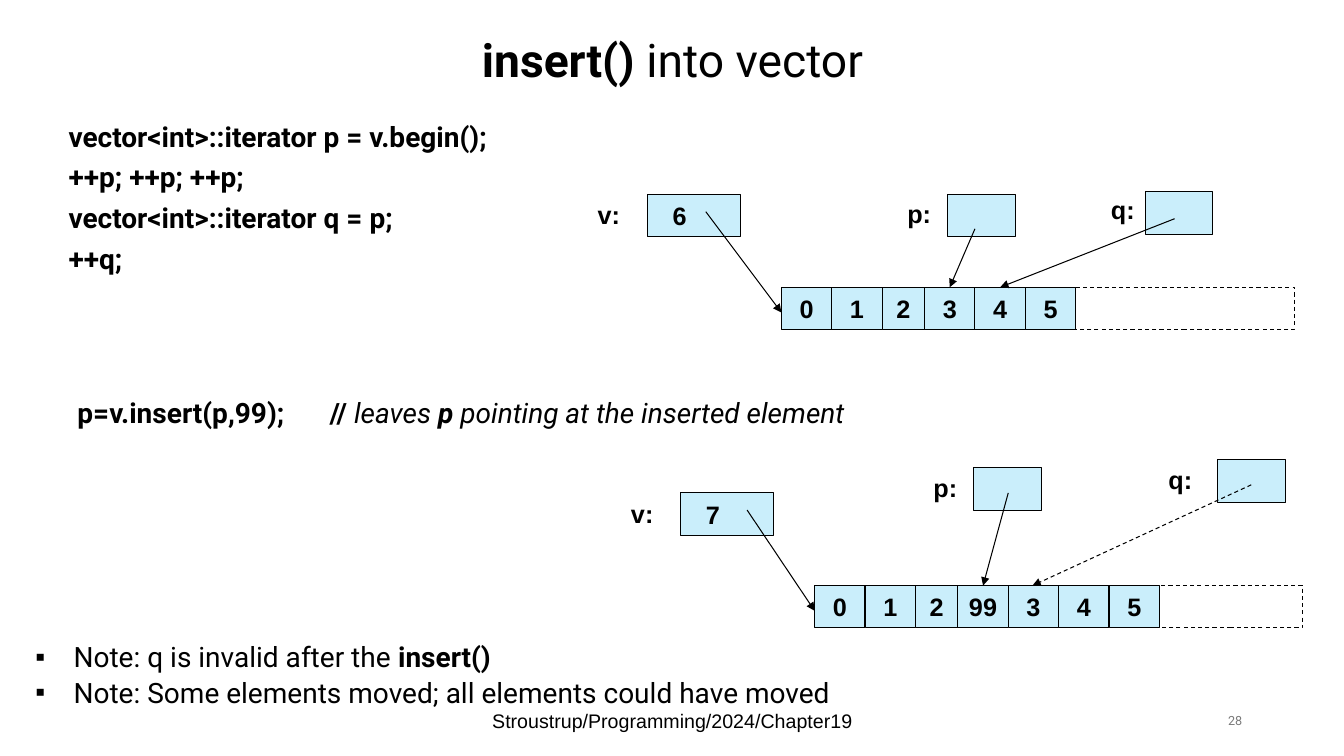
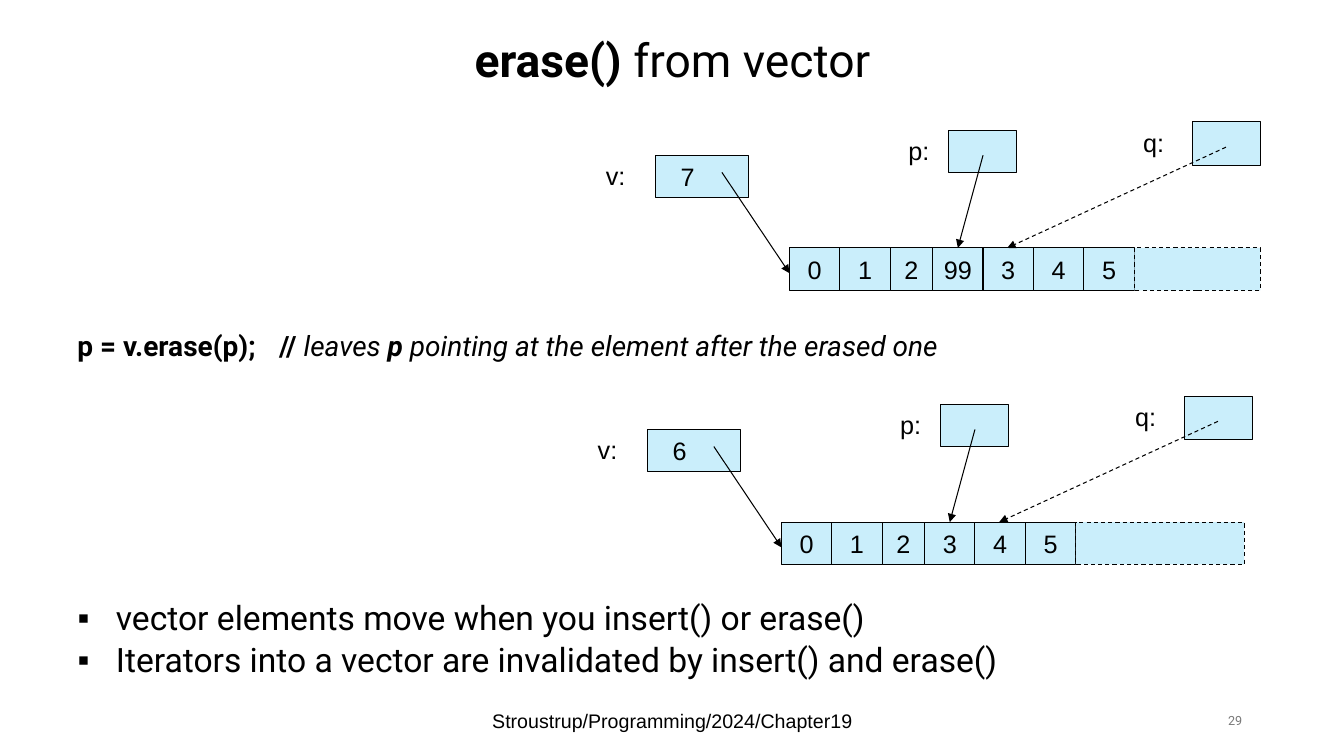
import lxml.etree
import pptx
import pptx.dml.color
import pptx.enum.dml
import pptx.enum.shapes
import pptx.enum.text
import pptx.oxml.ns
import pptx.util

Inches = pptx.util.Inches
Pt = pptx.util.Pt
qn = pptx.oxml.ns.qn
Align = pptx.enum.text.PP_ALIGN
Anchor = pptx.enum.text.MSO_ANCHOR
Dash = pptx.enum.dml.MSO_LINE


class Theme:
    ink = pptx.dml.color.RGBColor.from_string("000000")
    muted = pptx.dml.color.RGBColor.from_string("797979")
    cell = pptx.dml.color.RGBColor.from_string("CAEEFB")
    text_font = "Roboto"
    diagram_font = "Arial"
    title_size = 33
    list_size = 24
    code_size = 20
    diagram_size = 18
    footer_size = 14
    number_size = 9
    line_width = Pt(0.75)


def write(frame, paragraphs, *, size, font=Theme.text_font, color=Theme.ink,
          align=Align.LEFT, anchor=Anchor.TOP, spacing=1.0, before=0,
          bullet=None, tab=None, wrap=True):
    """Fill a frame; each paragraph is a list of (text, style), style using b and i."""
    frame.word_wrap = wrap
    frame.auto_size = pptx.enum.text.MSO_AUTO_SIZE.NONE
    frame.vertical_anchor = anchor
    for index, pieces in enumerate(paragraphs):
        para = frame.add_paragraph() if index else frame.paragraphs[0]
        properties = para._p.get_or_add_pPr()
        indent = Inches(0.38) if bullet else 0
        properties.set("marL", str(indent))
        properties.set("indent", str(-indent))
        if bullet:
            lxml.etree.SubElement(properties, qn("a:buFont"), typeface="Arial")
            lxml.etree.SubElement(properties, qn("a:buChar"), char=bullet)
        else:
            lxml.etree.SubElement(properties, qn("a:buNone"))
        if tab:
            stops = lxml.etree.SubElement(properties, qn("a:tabLst"))
            lxml.etree.SubElement(stops, qn("a:tab"), pos=str(Inches(tab)), algn="l")
        para.alignment = align
        para.line_spacing = spacing
        para.space_before = Pt(before if index else 0)
        for text, style in pieces:
            span = para.add_run()
            span.text = text
            span.font.name = font
            span.font.size = Pt(size)
            span.font.color.rgb = color
            span.font.bold = "b" in style
            span.font.italic = "i" in style


def draw_box(page, left, top, width, height=0.42, filled=True, dashed=False):
    box = page.shapes.add_shape(pptx.enum.shapes.MSO_SHAPE.RECTANGLE,
                                Inches(left), Inches(top), Inches(width), Inches(height))
    box.shadow.inherit = False
    if filled:
        box.fill.solid()
        box.fill.fore_color.rgb = Theme.cell
    else:
        box.fill.background()
    box.line.color.rgb = Theme.ink
    box.line.width = Theme.line_width
    if dashed:
        box.line.dash_style = Dash.DASH
    return box


# Offsets from the top left corner of the row of elements:
# label, box (left, top, width, height) and arrow start and end.
vector_handle = dict(label=("v:", -1.92, -0.92), box=(-1.33, -0.92, 0.92, 0.42),
                     arrow=(-0.67, -0.75, 0, 0.25))
p_handle = dict(label=("p:", 1.08, -1.17), box=(1.58, -1.17, 0.67, 0.42),
                arrow=(1.92, -0.92, 1.67, 0))
q_handle = dict(label=("q:", 3.41, -1.25), box=(4, -1.25, 0.67, 0.43),
                arrow=(4.33, -1, 2.16, 0), dashed=True)
usual_handles = [vector_handle, p_handle, q_handle]
valid_handles = [
    dict(vector_handle, arrow=(-0.75, -0.75, 0, 0.25)),
    dict(label=("p:", 1.15, -0.93), box=(1.65, -0.92, 0.67, 0.42),
         arrow=(1.92, -0.58, 1.67, 0)),
    dict(label=("q:", 3.17, -0.97), box=(3.61, -0.95, 0.67, 0.43),
         arrow=(3.9, -0.68, 2.17, 0)),
]
six_values = ["0", "1", "2", "3", "4", "5"]
seven_values = ["0", "1", "2", "99", "3", "4", "5"]

slides = [
    dict(
        number="28", layout="Two Content",
        title=[("insert() ", "b"), ("into vector", "")],
        bodies=[
            dict(at=(0.58, 1.17, 5.92, 1.75), before=7.5, size=Theme.code_size, paragraphs=[
                [("vector<int>::iterator p = v.begin();", "b")],
                [("++p; ++p; ++p;", "b")],
                [("vector<int>::iterator q = p;", "b")],
                [("++q;", "b")]]),
            dict(at=(0.25, 6.33, 10.67, 0.8), before=4, size=Theme.code_size, bullet="▪",
                 paragraphs=[
                     [("Note: q is invalid after the", ""), (" insert()", "b")],
                     [("Note: Some elements moved; all elements could have moved", "")]]),
        ],
        statement=dict(top=3.91, tab=2.58, pieces=[
            ("p=v.insert(p,99);\t// ", "b"), ("leaves", "i"), (" p ", "bi"),
            ("pointing at the inserted element", "i")]),
        style="b", spare_filled=False,
        diagrams=[
            dict(left=7.75, top=2.85, values=six_values, spare=2.17, handles=valid_handles),
            dict(left=8.08, top=5.81, values=seven_values, spare=1.42, handles=usual_handles),
        ],
    ),
    dict(
        number="29", layout="Title and Content",
        title=[("erase() ", "b"), ("from vector", "")],
        bodies=[
            dict(at=(0.67, 5.92, 10.58, 0.95), before=4, size=Theme.list_size, bullet="▪",
                 paragraphs=[
                     [("vector elements move when you insert() or erase()", "")],
                     [("Iterators into a vector are invalidated by insert() and erase()", "")]]),
        ],
        statement=dict(top=3.25, tab=2.38, pieces=[
            ("p = v.erase(p);\t// ", "b"), ("leaves", "i"), (" p ", "bi"),
            ("pointing at the element after the erased one", "i")]),
        style="", spare_filled=True,
        diagrams=[
            dict(left=7.83, top=2.46, values=seven_values, spare=1.25, handles=usual_handles),
            dict(left=7.75, top=5.18, values=six_values, spare=1.67, handles=usual_handles),
        ],
    ),
]

deck = pptx.Presentation()
deck.slide_width = Inches(13.33)
deck.slide_height = Inches(7.5)

for content in slides:
    page = deck.slides.add_slide(deck.slide_layouts.get_by_name(content["layout"]))
    title, *bodies = page.placeholders
    title.left, title.top, title.width, title.height = map(Inches, (2.17, 0, 9, 1.25))
    write(title.text_frame, [content["title"]], size=Theme.title_size,
          align=Align.CENTER, anchor=Anchor.MIDDLE, spacing=0.9)

    for body, block in zip(bodies, content["bodies"]):
        body.left, body.top, body.width, body.height = map(Inches, block["at"])
        write(body.text_frame, block["paragraphs"], size=block["size"], spacing=0.9,
              before=block["before"], bullet=block.get("bullet"))

    statement = content["statement"]
    box = page.shapes.add_textbox(Inches(0.67), Inches(statement["top"]),
                                  Inches(10.33), Inches(0.58))
    write(box.text_frame, [statement["pieces"]], size=Theme.code_size,
          spacing=0.9, tab=statement["tab"])

    style = content["style"]
    diagram_text = dict(size=Theme.diagram_size, font=Theme.diagram_font)
    centred = dict(diagram_text, align=Align.CENTER, anchor=Anchor.MIDDLE, wrap=False)
    for diagram in content["diagrams"]:
        left, top = diagram["left"], diagram["top"]
        cell_left = left
        for index, value in enumerate(diagram["values"]):
            cell_width = 0.42 if index == 2 else 0.5
            cell = draw_box(page, cell_left, top, cell_width)
            write(cell.text_frame, [[(value, style)]], **centred)
            cell_left += cell_width
        draw_box(page, cell_left, top, diagram["spare"],
                 filled=content["spare_filled"], dashed=True)

        for handle in diagram["handles"]:
            name, label_left, label_top = handle["label"]
            label = page.shapes.add_textbox(Inches(left + label_left), Inches(top + label_top),
                                            Inches(0.55), Inches(0.4))
            write(label.text_frame, [[(name, style)]], **diagram_text)

            box_left, box_top, width, height = handle["box"]
            box = draw_box(page, left + box_left, top + box_top, width, height)
            if name == "v:":
                box.text_frame.margin_right = Inches(0.38)
                write(box.text_frame, [[(str(len(diagram["values"])), style)]], **centred)

            start_x, start_y, end_x, end_y = handle["arrow"]
            arrow = page.shapes.add_connector(
                pptx.enum.shapes.MSO_CONNECTOR.STRAIGHT,
                Inches(left + start_x), Inches(top + start_y),
                Inches(left + end_x), Inches(top + end_y))
            arrow.line.color.rgb = Theme.ink
            arrow.line.width = Theme.line_width
            if handle.get("dashed"):
                arrow.line.dash_style = Dash.DASH
            lxml.etree.SubElement(arrow.line._get_or_add_ln(), qn("a:tailEnd"), type="triangle")
            lxml.etree.SubElement(arrow._element.spPr, qn("a:effectLst"))

    footer = page.shapes.add_textbox(Inches(4.42), Inches(6.95), Inches(4.5), Inches(0.4))
    write(footer.text_frame, [[("Stroustrup/Programming/2024/Chapter19", "")]],
          size=Theme.footer_size, font=Theme.diagram_font,
          align=Align.CENTER, anchor=Anchor.MIDDLE)
    number = page.shapes.add_textbox(Inches(9.42), Inches(6.95), Inches(3), Inches(0.4))
    write(number.text_frame, [[(content["number"], "")]], size=Theme.number_size,
          color=Theme.muted, align=Align.RIGHT, anchor=Anchor.MIDDLE)

deck.save("out.pptx")
